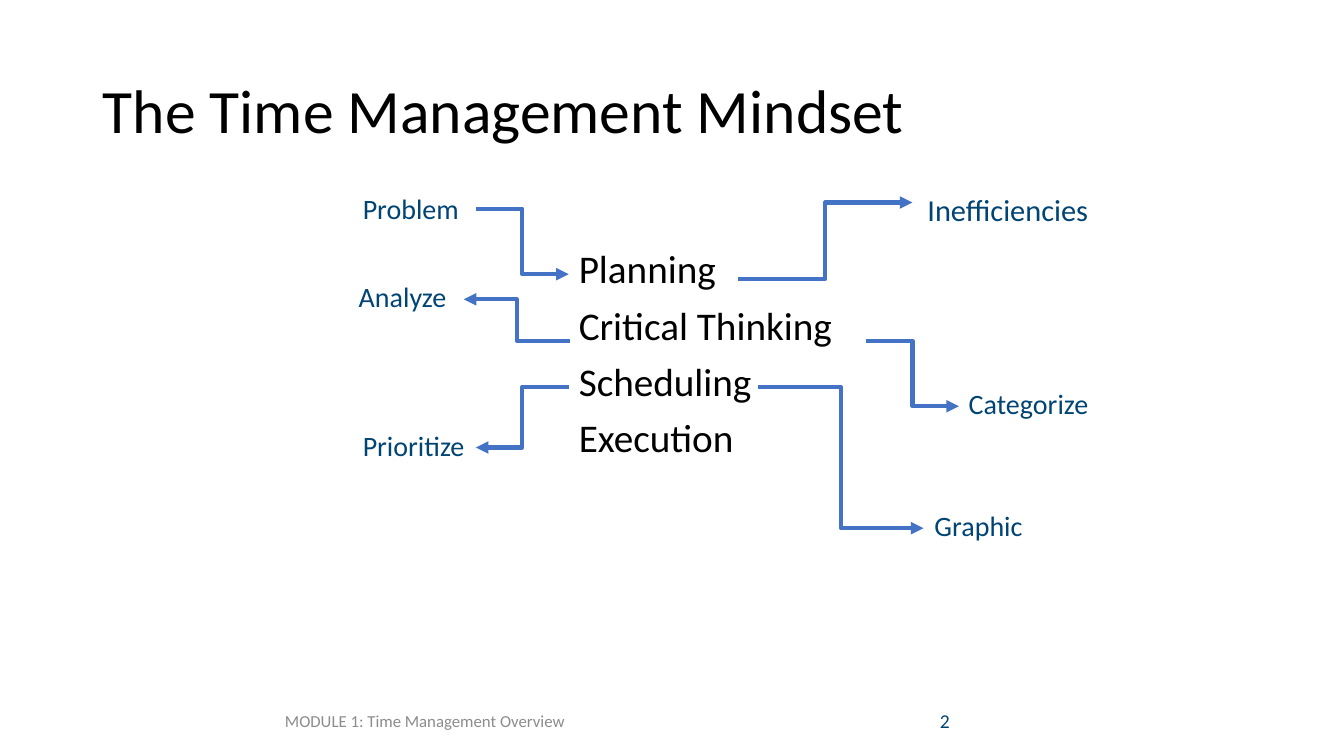
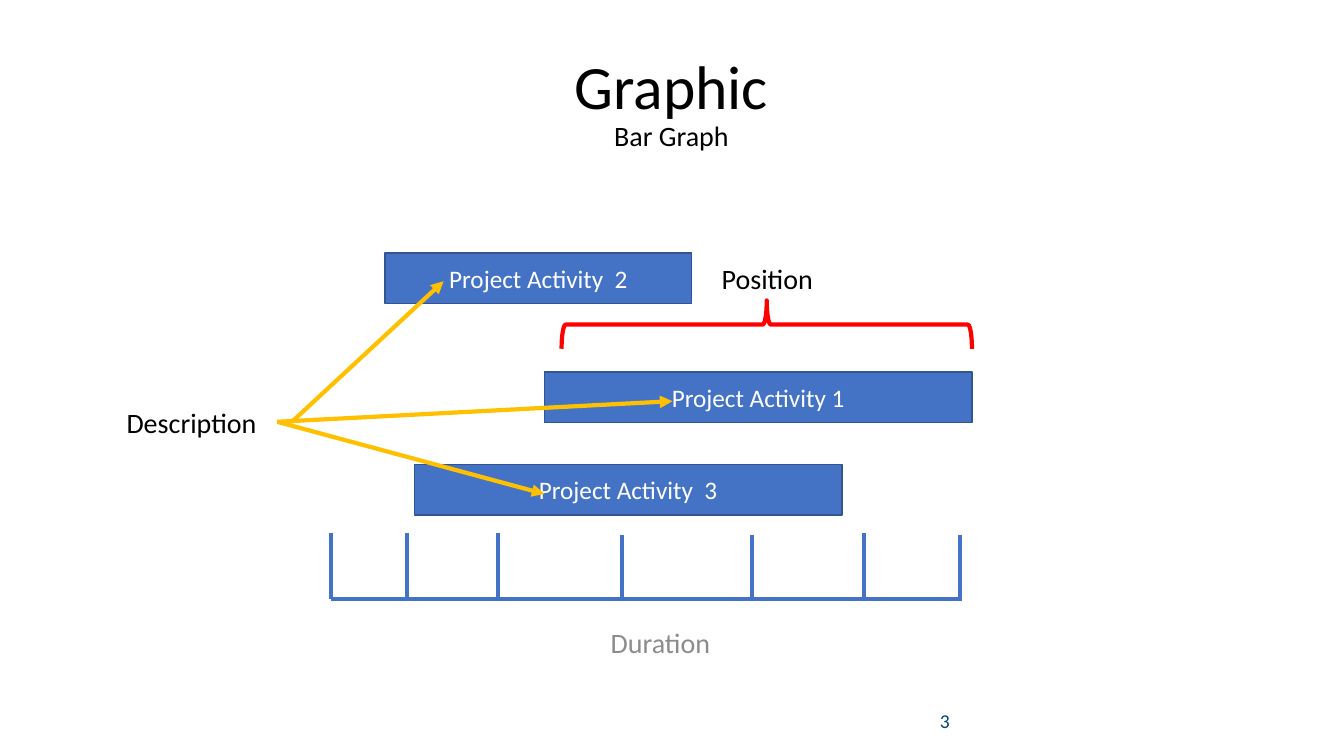
from lxml.etree import SubElement
from pptx import Presentation
from pptx.dml.color import RGBColor
from pptx.enum.shapes import MSO_CONNECTOR, MSO_SHAPE
from pptx.enum.text import MSO_ANCHOR, MSO_AUTO_SIZE, PP_ALIGN
from pptx.oxml.ns import qn
from pptx.util import Inches, Pt

FONT = "Calibri"
BLACK, WHITE, GREY, NAVY = "000000", "FFFFFF", "8C8C8C", "004474"
BLUE, DARK_BLUE, GOLD, RED = "4472C4", "325491", "FFC000", "FF0000"
TITLE_AND_CONTENT, TITLE_ONLY = 1, 5


def color(hex_value):
    return RGBColor.from_string(hex_value)


def place(shape, left, top, width, height):
    shape.left, shape.top = Inches(left), Inches(top)
    shape.width, shape.height = Inches(width), Inches(height)


def add_span(para, text, size, hex_value):
    span = para.add_run()
    span.text = text
    span.font.name = FONT
    span.font.size = Pt(size)
    span.font.color.rgb = color(hex_value)


def write(shape, text, size=20, hex_value=BLACK, align=PP_ALIGN.LEFT,
          anchor=MSO_ANCHOR.MIDDLE, line_spacing=1.0, gap=0, subtitle=None):
    frame = shape.text_frame
    frame.word_wrap = True
    frame.auto_size = MSO_AUTO_SIZE.NONE
    frame.vertical_anchor = anchor
    for index, line in enumerate(text.split("\n")):
        para = frame.add_paragraph() if index else frame.paragraphs[0]
        para.alignment = align
        para.line_spacing = line_spacing
        para.space_before = Pt(gap if index else 0)
        add_span(para, line, size, hex_value)
    if subtitle:
        para.add_line_break()
        add_span(para, subtitle, 20, hex_value)


def add_text(page, text, left, top, width, height, **style):
    box = page.shapes.add_textbox(0, 0, 0, 0)
    place(box, left, top, width, height)
    write(box, text, **style)
    return box


def add_line(page, start, end, hex_value=BLUE, kind=MSO_CONNECTOR.STRAIGHT, arrow=False):
    line = page.shapes.add_connector(kind, *(Inches(value) for value in (*start, *end)))
    line.line.color.rgb = color(hex_value)
    line.line.width = Pt(3)
    properties = line.element.spPr
    if arrow:
        SubElement(properties.find(qn("a:ln")), qn("a:tailEnd"), type="triangle")
    SubElement(properties, qn("a:effectLst"))
    return line


def add_page(deck, layout, title, title_box, number, align=PP_ALIGN.LEFT,
             subtitle=None, footer=None):
    page = deck.slides.add_slide(deck.slide_layouts[layout])
    place(page.shapes.title, *title_box)
    write(page.shapes.title, title, size=44, align=align, line_spacing=0.9, subtitle=subtitle)
    add_text(page, str(number), 7.19, 6.95, 2.33, 0.4, size=14, hex_value=NAVY,
             align=PP_ALIGN.RIGHT)
    if footer:
        add_text(page, footer, 2.19, 6.95, 4.05, 0.4, size=12, hex_value=GREY,
                 align=PP_ALIGN.CENTER)
    return page


def add_skill_list(page, left, top, width, height):
    body = page.placeholders[1]
    place(body, left, top, width, height)
    write(body, "Planning\nCritical Thinking\nScheduling\nExecution", size=28,
          anchor=MSO_ANCHOR.TOP, line_spacing=0.9, gap=10)
    for para in body.text_frame.paragraphs:
        properties = para._p.get_or_add_pPr()
        properties.set("marL", "0")
        properties.set("indent", "0")
        bullet = properties.makeelement(qn("a:buNone"))
        properties.append(bullet)


def add_mindset_map(page, left, top):
    add_skill_list(page, left + 2.14, top + 0.58, 3.36, 2.81)
    labels = [
        ("Problem", 0, 0, 20), ("Inefficiencies", 5.6, 0, 21.7),
        ("Analyze", -0.04, 0.87, 20), ("Categorize", 6.01, 1.94, 20),
        ("Prioritize", 0, 2.35, 20), ("Graphic", 5.67, 3.15, 20),
    ]
    for text, across, down, size in labels:
        add_text(page, text, left + across, top + down, 1.84, 0.56, size=size,
                 hex_value=NAVY, anchor=MSO_ANCHOR.TOP)
    elbows = [
        (1.22, 0.22, 2.14, 0.87), (3.82, 0.92, 5.55, 0.16), (2.15, 1.53, 1.1, 1.12),
        (5.09, 1.53, 6.01, 2.18), (2.14, 1.99, 1.22, 2.59), (4.02, 1.99, 5.66, 3.39),
    ]
    for start_x, start_y, end_x, end_y in elbows:
        add_line(page, (left + start_x, top + start_y), (left + end_x, top + end_y),
                 kind=MSO_CONNECTOR.ELBOW, arrow=True)


def add_bar(page, text, left, top, width):
    bar = page.shapes.add_shape(MSO_SHAPE.RECTANGLE, 0, 0, 0, 0)
    place(bar, left, top, width, 0.5)
    bar.shadow.inherit = False
    bar.fill.solid()
    bar.fill.fore_color.rgb = color(BLUE)
    bar.line.color.rgb = color(DARK_BLUE)
    bar.line.width = Pt(1)
    write(bar, text, size=18, hex_value=WHITE, align=PP_ALIGN.CENTER)


def add_duration_axis(page, left, top, width, height):
    add_line(page, (left, top + height), (left + width, top + height))
    ticks = [(0, 0), (0.76, 0), (1.66, 0), (2.89, 0.02), (4.18, 0.02), (5.29, 0), (width, 0.02)]
    for across, drop in ticks:
        add_line(page, (left + across, top + drop), (left + across, top + drop + height))


def add_position_brace(page, left, top, width, height):
    brace = page.shapes.add_shape(MSO_SHAPE.RIGHT_BRACE, 0, 0, 0, 0)
    place(brace, left + (width - height) / 2, top + (height - width) / 2, height, width)
    brace.rotation = 270
    brace.shadow.inherit = False
    brace.fill.background()
    brace.line.color.rgb = color(RED)
    brace.line.width = Pt(3)


def add_bar_graph(page, left, top):
    bars = [
        ("Project Activity  2", 2.77, 0, 3.04),
        ("Project Activity 1", 4.35, 1.18, 4.24),
        ("Project Activity  3", 3.06, 2.1, 4.24),
    ]
    for text, across, down, width in bars:
        add_bar(page, text, left + across, top + down, width)
    add_duration_axis(page, left + 2.23, top + 2.78, 6.24, 0.65)
    captions = [
        ("Duration", 4.65, 3.67, GREY), ("Position", 5.71, 0.06, BLACK),
        ("Description", 0, 1.48, BLACK),
    ]
    boxes = {
        text: add_text(page, text, left + across, top + down, 1.7, 0.39,
                       hex_value=hex_value, align=PP_ALIGN.CENTER)
        for text, across, down, hex_value in captions
    }
    add_line(page, (left + 1.84, top + 1.68), (left + 3.35, top + 0.28), GOLD, arrow=True)
    for across, down in [(5.62, 1.47), (4.35, 2.39)]:
        arrow = add_line(page, (left + 1.7, top + 1.68), (left + across, top + down),
                         GOLD, arrow=True)
        arrow.begin_connect(boxes["Description"], 3)
    add_position_brace(page, left + 4.52, top + 0.47, 4.07, 0.48)


def main():
    deck = Presentation()
    deck.slide_width, deck.slide_height = Inches(13.33), Inches(7.5)
    mindset = add_page(deck, TITLE_AND_CONTENT, "The Time Management Mindset",
                       (0.92, 0.4, 11.5, 1.45), 2,
                       footer="MODULE 1: Time Management Overview")
    add_mindset_map(mindset, 3.5, 1.85)
    graphic = add_page(deck, TITLE_ONLY, "Graphic", (5.28, 0.31, 2.76, 1.45), 3,
                       align=PP_ALIGN.CENTER, subtitle="Bar Graph")
    add_bar_graph(graphic, 1.05, 2.51)
    deck.save("out.pptx")


if __name__ == "__main__":
    main()
